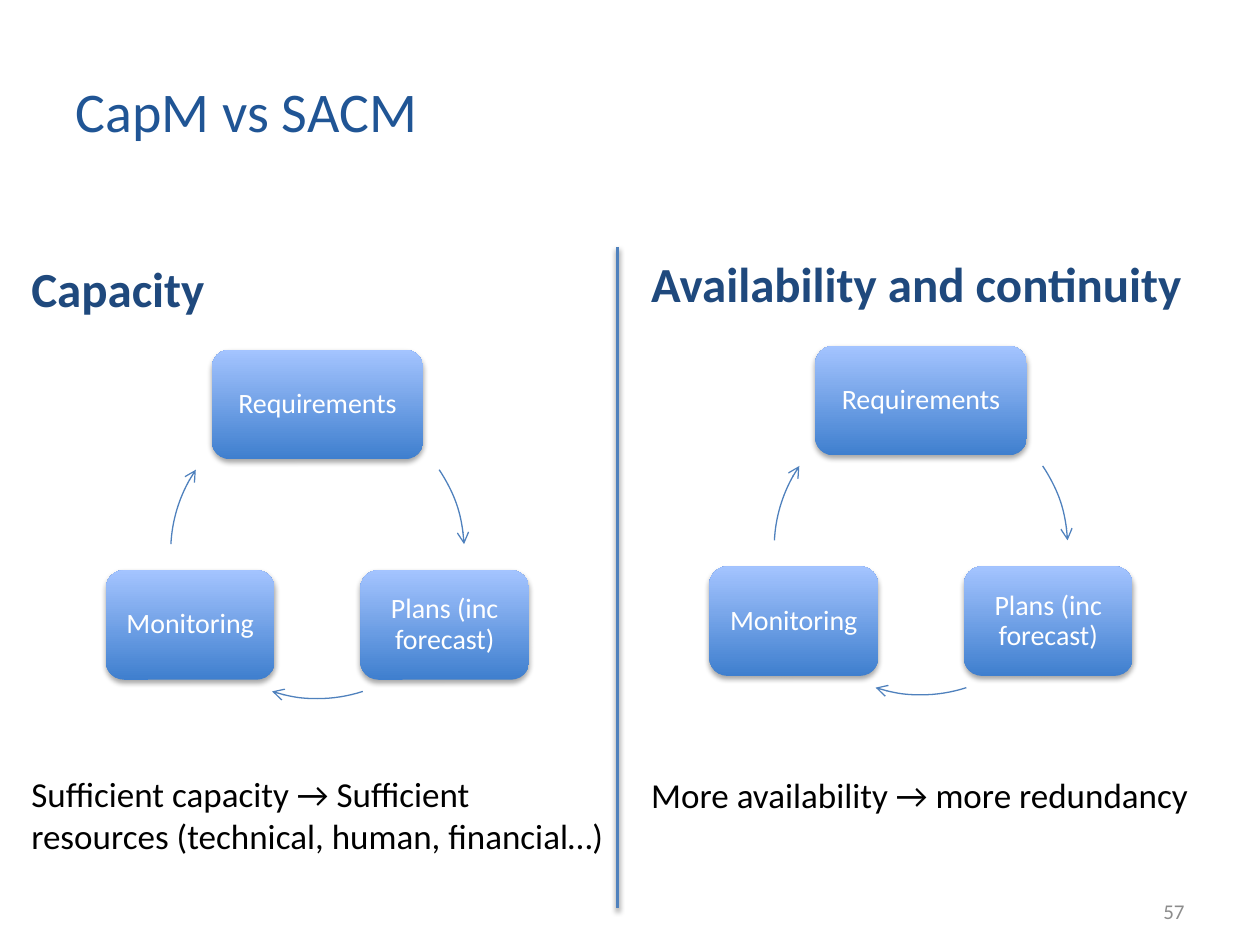
"""Build the slide that compares the capacity and availability cycles."""
from pptx import Presentation, oxml
from pptx.dml.color import RGBColor
from pptx.enum import shapes, text
from pptx.oxml import ns
from pptx.util import Inches, Pt

TITLE = RGBColor(0x20, 0x55, 0x95)
NAVY = RGBColor(0x1F, 0x49, 0x7D)
BLUE = RGBColor(0x4F, 0x81, 0xBD)
DARK = RGBColor(0x3F, 0x7F, 0xCE)
LIGHT = RGBColor(0xA4, 0xC4, 0xFF)
GREY = RGBColor(0x8C, 0x8C, 0x8C)
BLACK = RGBColor(0, 0, 0)
WHITE = RGBColor(255, 255, 255)


def write(par, words, size, color, bold=False):
    run = par.add_run()
    run.text = words
    run.font.name = "Calibri"
    run.font.size = Pt(size)
    run.font.bold = bold
    run.font.color.rgb = color


def shade(item, alpha, dist):
    item._element.spPr.append(oxml.parse_xml(
        f'<a:effectLst {ns.nsdecls("a")}><a:outerShdw blurRad="{Pt(3.1)}" '
        f'dist="{Pt(dist)}" dir="5400000" rotWithShape="0"><a:srgbClr val="000000">'
        f'<a:alpha val="{alpha * 1000}"/></a:srgbClr></a:outerShdw></a:effectLst>'))


deck = Presentation()
deck.slide_width, deck.slide_height = Inches(10), Inches(7.5)
slide = deck.slides.add_slide(deck.slide_layouts[5])
items = slide.shapes

title = items.title
title.left, title.top = Inches(0.5), Inches(0.3)
title.width, title.height = Inches(6.48), Inches(1.15)
title.text_frame.vertical_anchor = text.MSO_ANCHOR.MIDDLE
par = title.text_frame.paragraphs[0]
par.alignment = text.PP_ALIGN.LEFT
write(par, "CapM vs SACM", 32, TITLE)

box = items.add_textbox(Inches(7.17), Inches(7.03), Inches(2.33), Inches(0.4))
box.text_frame.word_wrap = True
box.text_frame.vertical_anchor = text.MSO_ANCHOR.MIDDLE
par = box.text_frame.paragraphs[0]
par.alignment = text.PP_ALIGN.RIGHT
write(par, "57", 12, GREY)

rule = items.add_connector(shapes.MSO_CONNECTOR.STRAIGHT,
                           Inches(4.9), Inches(1.96), Inches(4.9), Inches(7.21))
rule.line.color.rgb = BLUE
rule.line.width = Pt(2)
shade(rule, 38, 1.6)

sides = [
    (0.15, 2, 4.75, 4.88, "Capacity", 260,
     "Sufficient capacity → Sufficient resources (technical, human, financial…)"),
    (5.07, 1.96, 4.55, 4.61, "Availability and continuity", 264,
     "More availability → more redundancy"),
]
for left, top, width, height, head, gap, note in sides:
    box = items.add_textbox(Inches(left), Inches(top), Inches(width), Inches(height))
    box.text_frame.word_wrap = True
    write(box.text_frame.paragraphs[0], head, 28, NAVY, True)
    par = box.text_frame.add_paragraph()
    par.space_before = Pt(gap)
    write(par, note, 20, BLACK)

steps = [
    ("Requirements", 0, -1.17, 1.68, 326, 357),
    ("Plans (inc forecast)", 1.01, 0.58, 1.34, 72, 108),
    ("Monitoring", -1.01, 0.58, 1.34, 183, 214),
]
tall, ring = 0.87, 2.33
for mid, hub in [(2.52, 4.38), (7.31, 4.35)]:
    for name, across, down, wide, start, end in steps:
        card = items.add_shape(shapes.MSO_SHAPE.ROUNDED_RECTANGLE,
                               Inches(mid + across - wide / 2),
                               Inches(hub + down - tall / 2),
                               Inches(wide), Inches(tall))
        card.fill.gradient()
        card.fill.gradient_angle = 90
        for stop, color in zip(card.fill.gradient_stops, (DARK, LIGHT)):
            stop.color.rgb = color
        card.line.fill.background()
        shade(card, 35, 1.8)
        frame = card.text_frame
        frame.word_wrap = True
        frame.vertical_anchor = text.MSO_ANCHOR.MIDDLE
        frame.margin_left = frame.margin_right = Inches(0.11)
        frame.margin_top = frame.margin_bottom = Inches(0.11)
        par = frame.paragraphs[0]
        par.alignment = text.PP_ALIGN.CENTER
        par.line_spacing = 0.9
        write(par, name, 16, WHITE)

        arc = items.add_shape(shapes.MSO_SHAPE.ARC,
                              Inches(mid - ring / 2), Inches(hub - ring / 2),
                              Inches(ring), Inches(ring))
        arc.adjustments[0] = start * 0.6
        arc.adjustments[1] = end * 0.6
        arc.shadow.inherit = False
        arc.fill.background()
        arc.line.color.rgb = BLUE
        arc.line.width = Pt(0.75)
        arc.line._get_or_add_ln().append(oxml.parse_xml(
            f'<a:tailEnd {ns.nsdecls("a")} type="arrow"/>'))

deck.save("out.pptx")
